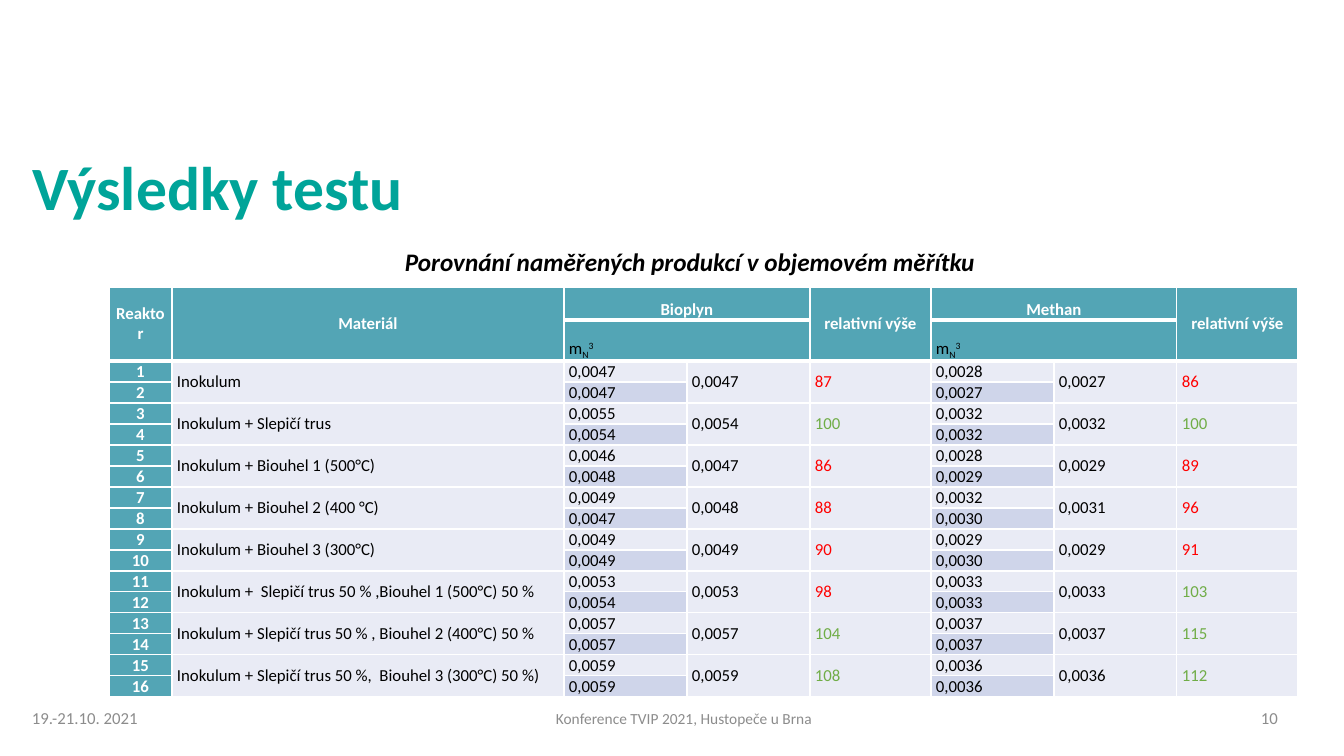
import pptx
import pptx.dml.color
import pptx.enum.text
import pptx.oxml
import pptx.oxml.ns
import pptx.util

TITLE = "Výsledky testu"
CAPTION = "Porovnání naměřených produkcí v\u00a0objemovém měřítku"
FOOTERS = [
    ("19.-21.10. 2021", (22, 701, 138, 34), 12, "LEFT"),
    ("Konference TVIP 2021, Hustopeče u Brna", (136, 701, 1096, 34), 11, "CENTER"),
    ("10", (1251, 701, 68, 34), 12, "LEFT"),
]
HEADINGS = {0: "Reaktor", 1: "Materiál", 2: "Bioplyn", 4: "relativní výše",
            5: "Methan", 7: "relativní výše"}
UNIT = [("m", 0), ("N", -25000), ("3", 30000)]
GAS_COLUMNS = (2, 5)
RESULTS = [
    ("Inokulum",
     ("0,0047", "0,0047", "0,0047", 87), ("0,0028", "0,0027", "0,0027", 86)),
    ("Inokulum + Slepičí trus",
     ("0,0055", "0,0054", "0,0054", 100), ("0,0032", "0,0032", "0,0032", 100)),
    ("Inokulum + Biouhel 1 (500°C)",
     ("0,0046", "0,0048", "0,0047", 86), ("0,0028", "0,0029", "0,0029", 89)),
    ("Inokulum + Biouhel 2 (400 °C)",
     ("0,0049", "0,0047", "0,0048", 88), ("0,0032", "0,0030", "0,0031", 96)),
    ("Inokulum + Biouhel 3 (300°C)",
     ("0,0049", "0,0049", "0,0049", 90), ("0,0029", "0,0030", "0,0029", 91)),
    ("Inokulum +  Slepičí trus 50 % ,Biouhel 1 (500°C) 50 %",
     ("0,0053", "0,0054", "0,0053", 98), ("0,0033", "0,0033", "0,0033", 103)),
    ("Inokulum + Slepičí trus 50 % , Biouhel 2 (400°C) 50 %",
     ("0,0057", "0,0057", "0,0057", 104), ("0,0037", "0,0037", "0,0037", 115)),
    ("Inokulum + Slepičí trus 50 %,  Biouhel 3 (300°C) 50 %)",
     ("0,0059", "0,0059", "0,0059", 108), ("0,0036", "0,0036", "0,0036", 112)),
]
COLORS = {"title": "00A499", "footer": "8C8C8C", "header": "53A5B5", "light": "E9EBF5",
          "dark": "CFD5EA", "white": "FFFFFF", "black": "000000",
          "low": "FF0000", "high": "70AD47"}
FONT = "Calibri"
COLUMN_WIDTHS = [63, 392, 123, 123, 121, 123, 123, 121]
ROW_HEIGHTS = [33, 41] + [21] * (2 * len(RESULTS))
TABLE_LEFT, TABLE_TOP = 109, 287
EMU_PER_PX = 914400 / 100.8
ALIGN = pptx.enum.text.PP_ALIGN
ANCHOR = pptx.enum.text.MSO_ANCHOR


def px(length):
    return pptx.util.Emu(round(length * EMU_PER_PX))


def color(name):
    return pptx.dml.color.RGBColor.from_string(COLORS[name])


def style(para, size, shade, bold=False, italic=False, align=ALIGN.LEFT):
    para.alignment = align
    for span in para.runs:
        span.font.name = FONT
        span.font.size = pptx.util.Pt(size)
        span.font.bold = bold
        span.font.italic = italic
        span.font.color.rgb = color(shade)


def add_text(page, text, frame):
    box = page.shapes.add_textbox(*map(px, frame))
    box.text_frame.word_wrap = True
    box.text_frame.vertical_anchor = ANCHOR.MIDDLE
    box.text_frame.text = text
    return box.text_frame


def add_borders(cell, row):
    properties = cell._tc.get_or_add_tcPr()
    widths = {"L": 1, "R": 1, "T": 3 if row in (1, 2) else 1, "B": 3 if row < 2 else 1}
    for position, (side, width) in enumerate(widths.items()):
        properties.insert(position, pptx.oxml.parse_xml(
            f'<a:ln{side} {pptx.oxml.ns.nsdecls("a")} w="{width * 12700}"><a:solidFill>'
            f'<a:srgbClr val="{COLORS["white"]}"/></a:solidFill></a:ln{side}>'))


def fill_cell(cell, text, shade="black", bold=False, align=ALIGN.LEFT, anchor=ANCHOR.MIDDLE):
    cell.text_frame.text = text
    cell.vertical_anchor = anchor
    style(cell.text_frame.paragraphs[0], 12, shade, bold, align=align)


def add_header(table):
    for column, heading in HEADINGS.items():
        is_gas = column in GAS_COLUMNS
        fill_cell(table.cell(0, column), heading, "white", True, ALIGN.CENTER,
                  ANCHOR.BOTTOM if is_gas else ANCHOR.MIDDLE)
        if not is_gas:
            table.cell(0, column).merge(table.cell(1, column))
            continue
        unit = table.cell(1, column)
        unit.vertical_anchor = ANCHOR.BOTTOM
        para = unit.text_frame.paragraphs[0]
        for text, baseline in UNIT:
            span = para.add_run()
            span.text = text
            if baseline:
                span.font._element.set("baseline", str(baseline))
        style(para, 12, "black")
        for row in (0, 1):
            table.cell(row, column).merge(table.cell(row, column + 1))


def add_results(table):
    for index, (material, *gases) in enumerate(RESULTS):
        top = 2 + 2 * index
        for row in (top, top + 1):
            fill_cell(table.cell(row, 0), str(row - 1), "white", True,
                      ALIGN.CENTER, ANCHOR.BOTTOM)
        spanning = [(1, material, "black")]
        for column, (first, second, mean, relative) in zip(GAS_COLUMNS, gases):
            fill_cell(table.cell(top, column), first)
            fill_cell(table.cell(top + 1, column), second)
            spanning += [(column + 1, mean, "black"),
                         (column + 2, str(relative), "high" if relative >= 100 else "low")]
        for column, text, shade in spanning:
            fill_cell(table.cell(top, column), text, shade)
            table.cell(top, column).merge(table.cell(top + 1, column))


def add_result_table(page):
    table = page.shapes.add_table(
        len(ROW_HEIGHTS), len(COLUMN_WIDTHS), px(TABLE_LEFT), px(TABLE_TOP),
        px(sum(COLUMN_WIDTHS)), px(sum(ROW_HEIGHTS))).table
    for column, width in zip(table.columns, COLUMN_WIDTHS):
        column.width = px(width)
    for row, height in enumerate(ROW_HEIGHTS):
        table.rows[row].height = px(height)
        for column in range(len(COLUMN_WIDTHS)):
            cell = table.cell(row, column)
            cell.margin_left = cell.margin_right = px(5)
            cell.margin_top = cell.margin_bottom = 0
            is_header = row < 2 or column == 0
            is_dark = row % 2 and column in GAS_COLUMNS
            cell.fill.solid()
            cell.fill.fore_color.rgb = color(
                "header" if is_header else "dark" if is_dark else "light")
            add_borders(cell, row)
    add_header(table)
    add_results(table)


def main():
    deck = pptx.Presentation()
    deck.slide_width, deck.slide_height = px(1344), px(756)
    page = deck.slides.add_slide(deck.slide_layouts[5])

    title = page.shapes.title
    title.left, title.top, title.width, title.height = map(px, (22, 116, 1300, 113))
    title.text_frame.text = TITLE
    title.text_frame.auto_size = pptx.enum.text.MSO_AUTO_SIZE.NONE
    title.text_frame.vertical_anchor = ANCHOR.BOTTOM
    title.text_frame.paragraphs[0].line_spacing = 0.9
    style(title.text_frame.paragraphs[0], 44, "title", bold=True)

    add_result_table(page)

    caption = add_text(page, CAPTION, (375, 241, 618, 40))
    caption.word_wrap = False
    caption.auto_size = pptx.enum.text.MSO_AUTO_SIZE.SHAPE_TO_FIT_TEXT
    para = caption.paragraphs[0]
    para._p.get_or_add_pPr().set("indent", str(px(20)))
    style(para, 18, "black", bold=True, italic=True, align=ALIGN.JUSTIFY)

    for text, frame, size, align in FOOTERS:
        footer = add_text(page, text, frame)
        style(footer.paragraphs[0], size, "footer", align=ALIGN[align])

    deck.save("out.pptx")


if __name__ == "__main__":
    main()
